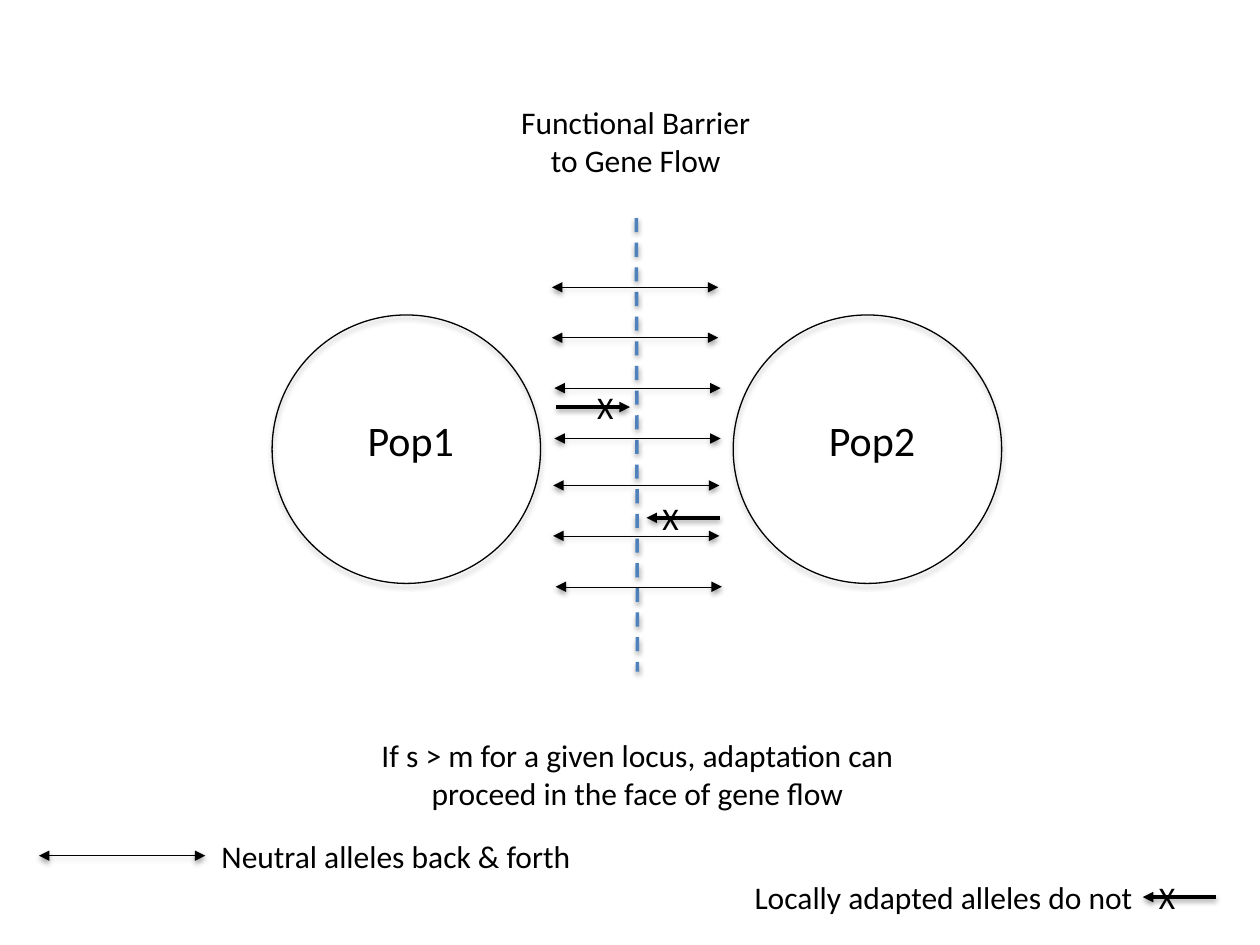
"""Draw two populations with a functional barrier to gene flow."""
from dataclasses import dataclass

import lxml.etree
import pptx
import pptx.dml.color
import pptx.enum.dml
import pptx.enum.shapes
import pptx.enum.text
import pptx.oxml.ns
import pptx.util

Pt = pptx.util.Pt
qn = pptx.oxml.ns.qn


@dataclass(frozen=True)
class Theme:
    ink: str = "000000"
    blue: str = "4F81BD"
    font: str = "Calibri"
    body: float = 18
    large: float = 24
    thin: float = 0.25
    edge: float = 0.75
    thick: float = 2


@dataclass(frozen=True)
class Pop:
    name: str
    left: float


@dataclass(frozen=True)
class Label:
    text: str
    left: float
    top: float
    width: float
    height: float
    size: float = Theme.body
    wrap: bool = False


@dataclass(frozen=True)
class Line:
    x1: float
    y1: float
    x2: float
    y2: float
    width: float = Theme.thin
    color: str = Theme.ink
    ends: tuple = ()
    dash: bool = False


@dataclass(frozen=True)
class Block:
    tip: float
    y: float
    way: int


BOTH = ("headEnd", "tailEnd")
SPAN = 95
POP_TOP, POP_SIZE = 180, 153.4
POPS = (Pop("Pop1", 155.5), Pop("Pop2", 419))
FENCE = Line(363.6, 124.6, 364.3, 383.8, Theme.thick, Theme.blue, dash=True)
FLOWS = ((315.4, 164.2), (315.4, 193), (316.8, 221.8), (316.8, 250.6),
         (316.1, 277.4), (316.1, 306.2), (317.5, 335.3), (22.3, 489))
BLOCKS = (Block(360, 232.6, 1), Block(369.4, 295.9, -1), Block(653, 512.6, -1))
LABELS = (
    Label("Functional Barrier to Gene Flow", 286.6, 55.4, 153.4, 51, wrap=True),
    Label("If s > m for a given locus, adaptation can proceed in the face of gene flow",
          203.8, 416.9, 321, 51, wrap=True),
    Label("Neutral alleles back & forth", 119.5, 474.5, 216, 29),
    Label("Locally adapted alleles do not", 424.1, 498.2, 233.3, 29),
)


def tint(code: str) -> pptx.dml.color.RGBColor:
    return pptx.dml.color.RGBColor.from_string(code)


def add_shade(shape, alpha: int, drop: float) -> None:
    effects = lxml.etree.SubElement(shape._element.spPr, qn("a:effectLst"))
    shade = lxml.etree.SubElement(
        effects, qn("a:outerShdw"), blurRad=str(Pt(3.1)), dist=str(Pt(drop)),
        dir="5400000", rotWithShape="0")
    color = lxml.etree.SubElement(shade, qn("a:srgbClr"), val=Theme.ink)
    lxml.etree.SubElement(color, qn("a:alpha"), val=str(alpha * 1000))


def draw_label(slide, label: Label) -> None:
    box = slide.shapes.add_textbox(
        Pt(label.left), Pt(label.top), Pt(label.width), Pt(label.height))
    frame = box.text_frame
    frame.word_wrap = label.wrap
    frame.auto_size = pptx.enum.text.MSO_AUTO_SIZE.SHAPE_TO_FIT_TEXT
    para = frame.paragraphs[0]
    para.text = label.text
    if label.wrap:
        para.alignment = pptx.enum.text.PP_ALIGN.CENTER
    para.font.name = Theme.font
    para.font.size = Pt(label.size)
    para.font.color.rgb = tint(Theme.ink)


def draw_line(slide, line: Line) -> None:
    link = slide.shapes.add_connector(
        pptx.enum.shapes.MSO_CONNECTOR.STRAIGHT,
        Pt(line.x1), Pt(line.y1), Pt(line.x2), Pt(line.y2))
    link.line.width = Pt(line.width)
    link.line.color.rgb = tint(line.color)
    if line.dash:
        link.line.dash_style = pptx.enum.dml.MSO_LINE.DASH
    stroke = link.line._get_or_add_ln()
    for end in line.ends:
        lxml.etree.SubElement(stroke, qn(f"a:{end}"), type="triangle")
    add_shade(link, 38, 1.6)


def draw_pop(slide, pop: Pop) -> None:
    ring = slide.shapes.add_shape(
        pptx.enum.shapes.MSO_SHAPE.OVAL,
        Pt(pop.left), Pt(POP_TOP), Pt(POP_SIZE), Pt(POP_SIZE))
    ring.fill.background()
    ring.line.color.rgb = tint(Theme.ink)
    ring.line.width = Pt(Theme.edge)
    add_shade(ring, 35, 1.8)
    draw_label(slide, Label(pop.name, pop.left + 47.5, 233.3, 65, 36, Theme.large))


def draw_block(slide, block: Block) -> None:
    start = block.tip - block.way * 42
    draw_line(slide, Line(start, block.y, block.tip, block.y,
                          Theme.thick, ends=("tailEnd",)))
    mid = block.tip - block.way * 14
    draw_label(slide, Label("X", mid - 11.9, block.y - 14.4, 23.8, 29))


def main() -> None:
    deck = pptx.Presentation()
    deck.slide_width, deck.slide_height = Pt(720), Pt(540)
    slide = deck.slides.add_slide(deck.slide_layouts[6])
    for pop in POPS:
        draw_pop(slide, pop)
    draw_line(slide, FENCE)
    for x, y in FLOWS:
        draw_line(slide, Line(x, y, x + SPAN, y, ends=BOTH))
    for block in BLOCKS:
        draw_block(slide, block)
    for label in LABELS:
        draw_label(slide, label)
    deck.save("out.pptx")


if __name__ == "__main__":
    main()
